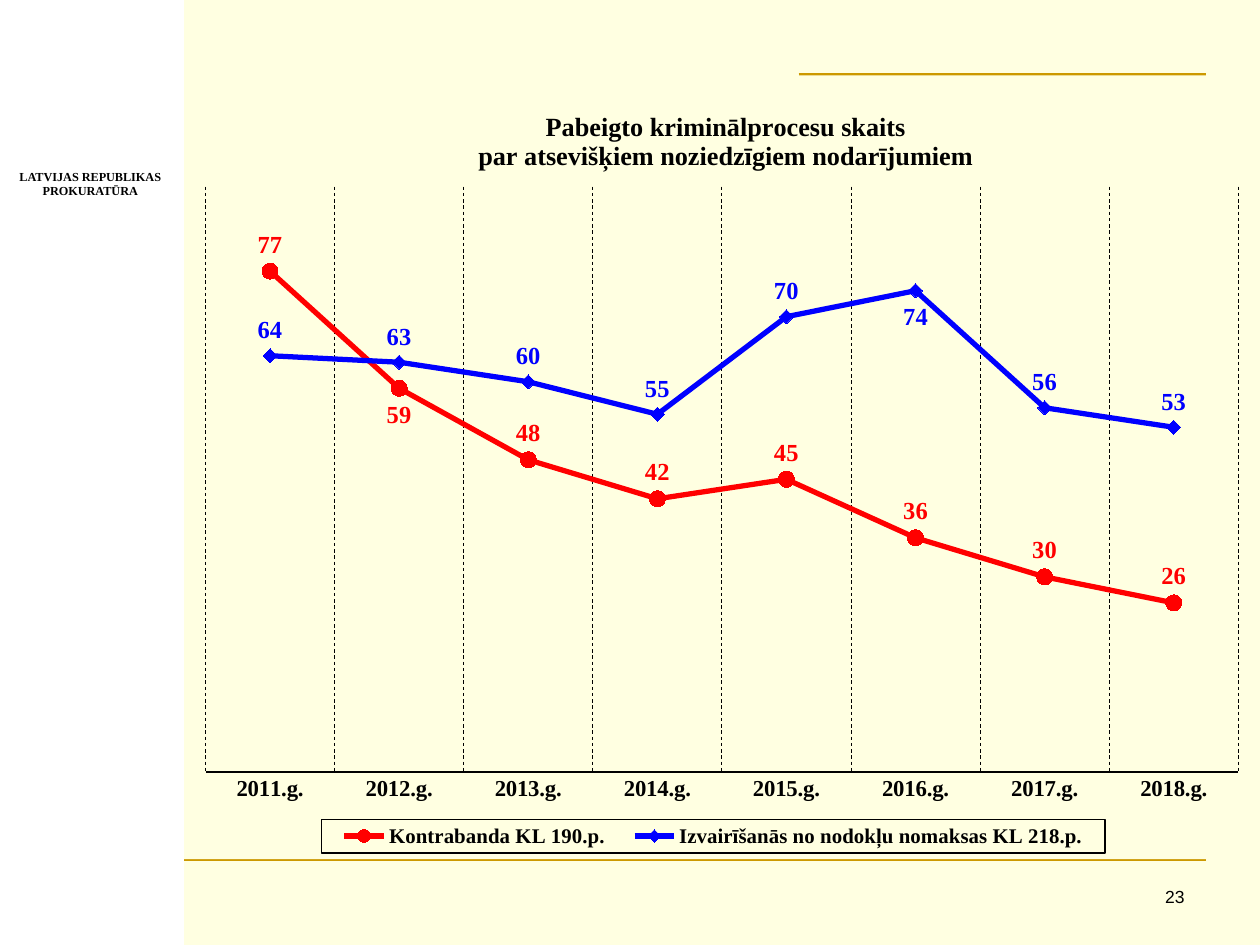
from dataclasses import dataclass

import lxml.etree as etree
import pptx
import pptx.chart.data
import pptx.dml.color
import pptx.enum.chart
import pptx.enum.dml
import pptx.enum.shapes
import pptx.enum.text
import pptx.oxml
import pptx.oxml.ns
import pptx.util

Cm, Pt = pptx.util.Cm, pptx.util.Pt
qn = pptx.oxml.ns.qn
Align = pptx.enum.text.PP_ALIGN
Marker = pptx.enum.chart.XL_MARKER_STYLE
LabelPosition = pptx.enum.chart.XL_LABEL_POSITION

COLORS = {
    "cream": "FFFFE1", "white": "FFFFFF", "gold": "CC9900", "black": "000000",
    "red": "FF0000", "blue": "0000FF", "sky": "00B0F0", "yellow": "FFFF00",
}
SERIF, SANS = "Times New Roman", "Arial"
WIDTH, HEIGHT, SIDEBAR = 25.4, 19.05, 3.71
RULE_TOP, RULE_BOTTOM, RULE_END = 1.52, 17.32, 24.31
YEARS = [f"{year}.g." for year in range(2011, 2019)]
TITLE = "Pabeigto kriminālprocesu skaits\npar atsevišķiem noziedzīgiem nodarījumiem"


@dataclass
class Rule:
    left: float
    top: float


@dataclass
class Caption:
    text: str
    left: float
    top: float
    width: float
    height: float
    align: Align
    wrap: bool
    font: dict


@dataclass
class Offence:
    name: str
    counts: list
    color: str
    marker: Marker
    marker_size: int
    marker_color: str
    label_below: int


RULES = [Rule(SIDEBAR, RULE_BOTTOM), Rule(16.1, RULE_TOP)]
CAPTIONS = [
    Caption("LATVIJAS REPUBLIKAS\nPROKURATŪRA", 0.13, 3.28, 3.38, 0.84, Align.CENTER, False,
            {"name": SERIF, "size": Pt(7), "bold": True}),
    Caption("23", 18.85, 17.73, 5.28, 0.89, Align.RIGHT, True,
            {"name": SANS, "size": Pt(10), "bold": False}),
]
OFFENCES = [
    Offence("Kontrabanda KL 190.p.", [77, 59, 48, 42, 45, 36, 30, 26],
            "red", Marker.CIRCLE, 9, "sky", 1),
    Offence("Izvairīšanās no nodokļu nomaksas KL 218.p.", [64, 63, 60, 55, 70, 74, 56, 53],
            "blue", Marker.DIAMOND, 8, "yellow", 5),
]


def rgb(color: str) -> pptx.dml.color.RGBColor:
    return pptx.dml.color.RGBColor.from_string(COLORS[color])


def paint(fill, color: str) -> None:
    fill.solid()
    fill.fore_color.rgb = rgb(color)


def style_font(font, formats: dict, color: str = "black") -> None:
    for name, value in formats.items():
        setattr(font, name, value)
    font.color.rgb = rgb(color)


def style_line(line, color: str, width: float) -> None:
    line.color.rgb = rgb(color)
    line.width = Pt(width)


def serif(size: float) -> dict:
    return {"name": SERIF, "size": Pt(size), "bold": True}


def draw_sidebar(page) -> None:
    panel = page.shapes.add_shape(
        pptx.enum.shapes.MSO_SHAPE.RECTANGLE, 0, 0, Cm(SIDEBAR), Cm(HEIGHT))
    panel.shadow.inherit = False
    paint(panel.fill, "white")
    panel.line.fill.background()


def draw_rule(page, rule: Rule) -> None:
    line = page.shapes.add_connector(
        pptx.enum.shapes.MSO_CONNECTOR.STRAIGHT,
        Cm(rule.left), Cm(rule.top), Cm(RULE_END), Cm(rule.top))
    style_line(line.line, "gold", 2.25)
    etree.SubElement(line._element.spPr, qn("a:effectLst"))


def draw_caption(page, caption: Caption) -> None:
    box = page.shapes.add_textbox(
        Cm(caption.left), Cm(caption.top), Cm(caption.width), Cm(caption.height))
    box.text_frame.word_wrap = caption.wrap
    box.text_frame.text = caption.text
    for para in box.text_frame.paragraphs:
        para.alignment = caption.align
        for span in para.runs:
            style_font(span.font, caption.font)


def place(parent, after: str, **fractions: float) -> None:
    """Give a chart part a fixed layout, as fractions of the chart."""
    for old in parent.findall(qn("c:layout")):
        parent.remove(old)
    layout = etree.Element(qn("c:layout"))
    manual = etree.SubElement(layout, qn("c:manualLayout"))
    if after == "":
        etree.SubElement(manual, qn("c:layoutTarget"), val="inner")
        parent.insert(0, layout)
    else:
        parent.find(qn(after)).addnext(layout)
    for key in ("xMode", "yMode"):
        etree.SubElement(manual, qn(f"c:{key}"), val="edge")
    for key, value in fractions.items():
        etree.SubElement(manual, qn(f"c:{key}"), val=str(value))


def style_series(series, offence: Offence) -> None:
    series.smooth = False
    style_line(series.format.line, offence.color, 3)
    series.marker.style = offence.marker
    series.marker.size = offence.marker_size
    paint(series.marker.format.fill, offence.marker_color)
    style_line(series.marker.format.line, offence.color, 0.75)
    labels = series.data_labels
    labels.show_value = True
    labels.position = LabelPosition.ABOVE
    lowered = series.points[offence.label_below].data_label
    for label in (labels, lowered):
        style_font(label.font, serif(14), offence.color)
    lowered.position = LabelPosition.BELOW


def style_axes(chart) -> None:
    years, counts = chart.category_axis, chart.value_axis
    years.major_tick_mark = pptx.enum.chart.XL_TICK_MARK.NONE
    style_font(years.tick_labels.font, serif(13))
    style_line(years.format.line, "black", 1.5)
    years.has_major_gridlines = True
    grid = years.major_gridlines.format.line
    style_line(grid, "black", 0.5)
    grid.dash_style = pptx.enum.dml.MSO_LINE.DASH
    counts.minimum_scale, counts.maximum_scale = 0, 90
    counts.has_major_gridlines = False
    counts.visible = False


def outline_legend(legend) -> None:
    """Frame the legend with a thin black line."""
    frame = pptx.oxml.parse_xml(
        f'<c:spPr {pptx.oxml.ns.nsdecls("c", "a")}><a:ln w="9525"><a:solidFill>'
        f'<a:srgbClr val="{COLORS["black"]}"/></a:solidFill></a:ln></c:spPr>')
    legend._element.find(qn("c:overlay")).addnext(frame)


def draw_chart(page) -> None:
    data = pptx.chart.data.CategoryChartData()
    data.categories = YEARS
    for offence in OFFENCES:
        data.add_series(offence.name, offence.counts)
    chart = page.shapes.add_chart(
        pptx.enum.chart.XL_CHART_TYPE.LINE_MARKERS, Cm(SIDEBAR), Cm(RULE_TOP),
        Cm(WIDTH - SIDEBAR), Cm(RULE_BOTTOM - RULE_TOP), data).chart
    style_font(chart.font, {"name": SERIF, "size": Pt(10)})
    background = pptx.oxml.parse_xml(
        f'<c:spPr {pptx.oxml.ns.nsdecls("c", "a")}><a:solidFill><a:srgbClr '
        f'val="{COLORS["cream"]}"/></a:solidFill><a:ln><a:noFill/></a:ln></c:spPr>')
    chart.element.find(qn("c:chart")).addnext(background)
    chart.has_title = True
    heading = chart.chart_title.text_frame
    heading.text = TITLE
    for para in heading.paragraphs:
        style_font(para.runs[0].font, serif(15))
    place(chart.chart_title._element, "c:tx", x=0.27, y=0.04)
    style_axes(chart)
    for series, offence in zip(chart.plots[0].series, OFFENCES):
        style_series(series, offence)
    place(chart.element.find(".//" + qn("c:plotArea")), "", x=0.02, y=0.142, w=0.96, h=0.747)
    chart.has_legend = True
    legend = chart.legend
    legend.position = pptx.enum.chart.XL_LEGEND_POSITION.BOTTOM
    legend.include_in_layout = False
    style_font(legend.font, serif(11.9))
    place(legend._element, "c:legendPos", x=0.128, y=0.949, w=0.728, h=0.043)
    outline_legend(legend)


def main() -> None:
    deck = pptx.Presentation()
    deck.slide_width, deck.slide_height = Cm(WIDTH), Cm(HEIGHT)
    page = deck.slides.add_slide(deck.slide_layouts[6])
    paint(page.background.fill, "cream")
    draw_sidebar(page)
    for rule in RULES:
        draw_rule(page, rule)
    for caption in CAPTIONS:
        draw_caption(page, caption)
    draw_chart(page)
    deck.save("out.pptx")


if __name__ == "__main__":
    main()
